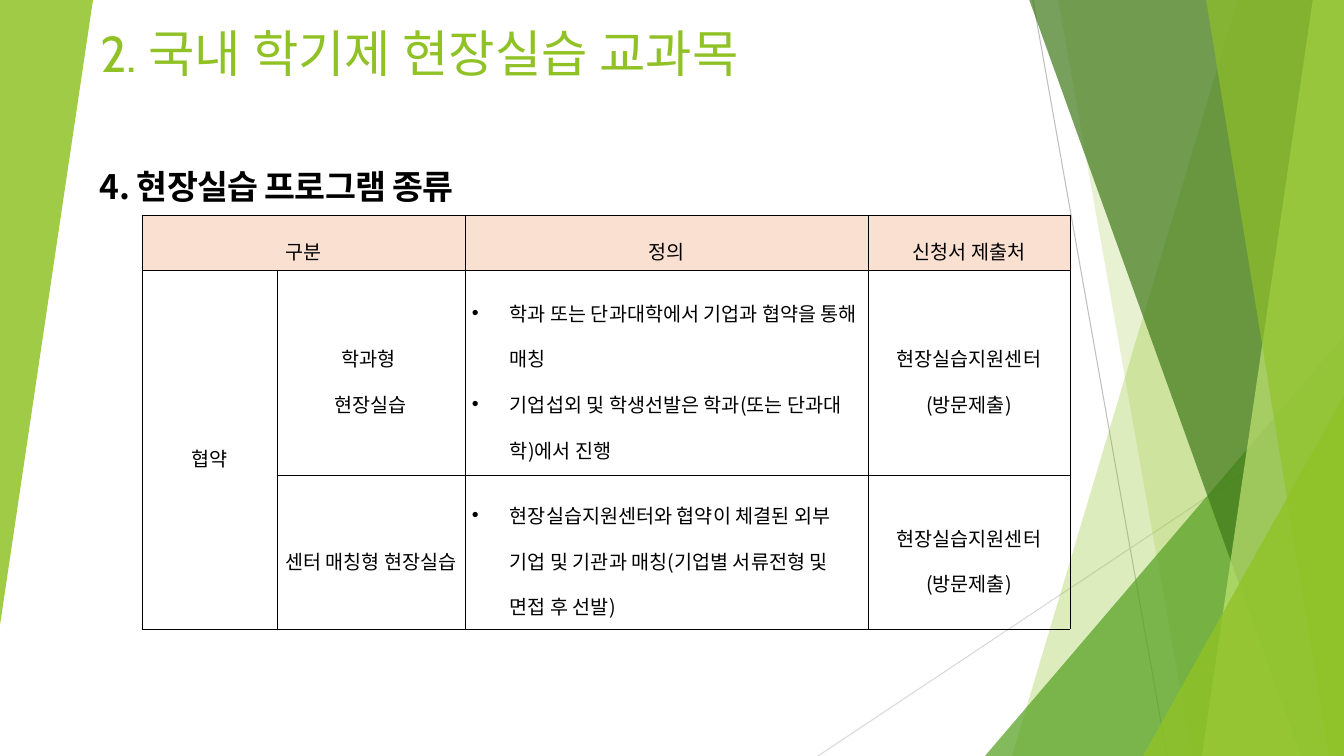
"""Build the slide on types of field training programme."""
import pptx
import pptx.dml.color
import pptx.enum.shapes
import pptx.enum.text
import pptx.oxml
import pptx.oxml.ns
import pptx.util

WIDE, HIGH = 1344, 756
SCALE = 914400 / 100.8
SANS = "Noto Sans CJK KR"
HUES = {"lime": "90C226", "leaf": "54A021", "moss": "3F7819", "pale": "C0E474",
        "peach": "FAE0D1", "ink": "000000", "grey": "BFBFBF", "mist": "D9D9D9"}

TITLE = "2. 국내 학기제 현장실습 교과목"
HEADING = "4. 현장실습 프로그램 종류"
OFFICE = ["현장실습지원센터 (방문제출)"]
ROWS = [
    [["구분"], [], ["정의"], ["신청서 제출처"]],
    [["협약"], ["학과형 ", "현장실습"],
     ["학과 또는 단과대학에서 기업과 협약을 통해 매칭",
      "기업섭외 및 학생선발은 학과(또는 단과대학)에서 진행"], OFFICE],
    [[], ["센터 매칭형 현장실습"],
     ["현장실습지원센터와 협약이 체결된 외부 기업 및 기관과 매칭"
      "(기업별 서류전형 및 면접 후 선발)"], OFFICE],
]
COLS, TALLS = [135, 188, 403, 202], [55, 205, 154]
BULLETS = 2

RAYS = [((1033, 0), (1167, HIGH), "grey"), ((WIDE, 406), (818, HIGH), "mist")]
FACETS = [
    ("wedge", (1238, 1012), "lime", 30),
    ("wedge", (1058, 1192), "lime", 20),
    ("corner", (985, 336, 359, 420, 0), "leaf", 72),
    ("wedge", (1029, 1301), "moss", 70),
    ("wedge", (1313, 1202), "pale", 70),
    ("wedge", (1206, 1329), "lime", 65),
    ("corner", (1143, 396, 201, 360, 0), "lime", 80),
    ("corner", (0, 0, 93, 625, 180), "lime", 85),
]


def px(num):
    return pptx.util.Emu(round(num * SCALE))


def rgb(hue):
    return pptx.dml.color.RGBColor.from_string(HUES[hue])


def sub(node, tag, **attrs):
    kid = pptx.oxml.parse_xml(f"<{tag} {pptx.oxml.ns.nsdecls('a')}/>")
    for key, val in attrs.items():
        kid.set(key, str(val))
    node.append(kid)
    return kid


def write(para, text, size, hue, font, bold=False):
    run = para.add_run()
    run.text = text
    run.font.size = pptx.util.Pt(size)
    run.font.bold = bold
    run.font.color.rgb = rgb(hue)
    run.font.name = font
    sub(run.font._element, "a:ea", typeface=font)
    return run


def draw_ray(shapes, start, end, hue):
    ray = shapes.add_connector(pptx.enum.shapes.MSO_CONNECTOR.STRAIGHT,
                               *map(px, start + end))
    ray.line.color.rgb = rgb(hue)
    ray.line.width = pptx.util.Pt(0.75)
    sub(ray._element.spPr, "a:effectLst")


def draw_facet(shapes, kind, dims, hue, alpha):
    if kind == "wedge":
        top, low = map(px, dims)
        edge, roof, base = px(WIDE), px(-1), px(HIGH)
        path = shapes.build_freeform(top, roof, scale=1.0)
        path.add_line_segments([(edge, roof), (edge, base), (low, base)])
        facet = path.convert_to_shape()
    else:
        facet = shapes.add_shape(pptx.enum.shapes.MSO_SHAPE.ISOSCELES_TRIANGLE,
                                 *map(px, dims[:4]))
        facet.adjustments[0] = 1
        facet.rotation = dims[4]
    facet.shadow.inherit = False
    facet.line.fill.background()
    facet.fill.solid()
    facet.fill.fore_color.rgb = rgb(hue)
    tint = facet._element.spPr.find(".//" + pptx.oxml.ns.qn("a:srgbClr"))
    sub(tint, "a:alpha", val=alpha * 1000)


def fill_cell(cell, lines, head, listed):
    cell.vertical_anchor = pptx.enum.text.MSO_ANCHOR.MIDDLE
    cell.margin_left = cell.margin_right = px(7)
    cell.margin_top = cell.margin_bottom = px(2)
    props = cell._tc.get_or_add_tcPr()
    for side in ("lnL", "lnR", "lnT", "lnB"):
        edge = sub(props, "a:" + side, w=pptx.util.Pt(0.28))
        sub(sub(edge, "a:solidFill"), "a:srgbClr", val=HUES["ink"])
    if head:
        cell.fill.solid()
        cell.fill.fore_color.rgb = rgb("peach")
    else:
        cell.fill.background()
    frame = cell.text_frame
    for num, line in enumerate(lines):
        para = frame.add_paragraph() if num else frame.paragraphs[0]
        para.line_spacing = 1.6
        if listed:
            props = para._p.get_or_add_pPr()
            props.set("marL", str(px(38)))
            props.set("indent", str(px(-38)))
            sub(props, "a:buFont", typeface="Arial")
            sub(props, "a:buChar", char="•")
        else:
            para.alignment = pptx.enum.text.PP_ALIGN.CENTER
        write(para, line, 14, "ink", SANS)


def draw_table(shapes):
    table = shapes.add_table(len(TALLS), len(COLS), px(142), px(215),
                             px(sum(COLS)), px(sum(TALLS))).table
    table.first_row = table.horz_banding = False
    for col, wide in zip(table.columns, COLS):
        col.width = px(wide)
    for row, tall in zip(table.rows, TALLS):
        row.height = px(tall)
    table.cell(0, 0).merge(table.cell(0, 1))
    table.cell(1, 0).merge(table.cell(2, 0))
    for i, row in enumerate(ROWS):
        for j, lines in enumerate(row):
            fill_cell(table.cell(i, j), lines, i == 0, i > 0 and j == BULLETS)


def main():
    deck = pptx.Presentation()
    deck.slide_width, deck.slide_height = px(WIDE), px(HIGH)
    shapes = deck.slides.add_slide(deck.slide_layouts[5]).shapes
    for ray in RAYS:
        draw_ray(shapes, *ray)
    for facet in FACETS:
        draw_facet(shapes, *facet)

    title = shapes.title
    title.left, title.top, title.width, title.height = map(px, (90, 10, 899, 78))
    frame = title.text_frame
    frame.auto_size = pptx.enum.text.MSO_AUTO_SIZE.NONE
    frame.vertical_anchor = pptx.enum.text.MSO_ANCHOR.BOTTOM
    para = frame.paragraphs[0]
    para.alignment = pptx.enum.text.PP_ALIGN.LEFT
    write(para, TITLE, 36, "lime", "Cabin")
    shapes._spTree.append(title._element)

    frame = shapes.add_textbox(*map(px, (90, 137, 999, 76))).text_frame
    frame.word_wrap = True
    frame.auto_size = pptx.enum.text.MSO_AUTO_SIZE.SHAPE_TO_FIT_TEXT
    para = frame.paragraphs[0]
    para.alignment = pptx.enum.text.PP_ALIGN.JUSTIFY
    para.line_spacing = 1.6
    para.space_before = pptx.util.Pt(5)
    run = write(para, HEADING, 24, "ink", SANS, True)
    run.font._element.set("spc", "-50")

    draw_table(shapes)
    deck.save("out.pptx")


if __name__ == "__main__":
    main()
